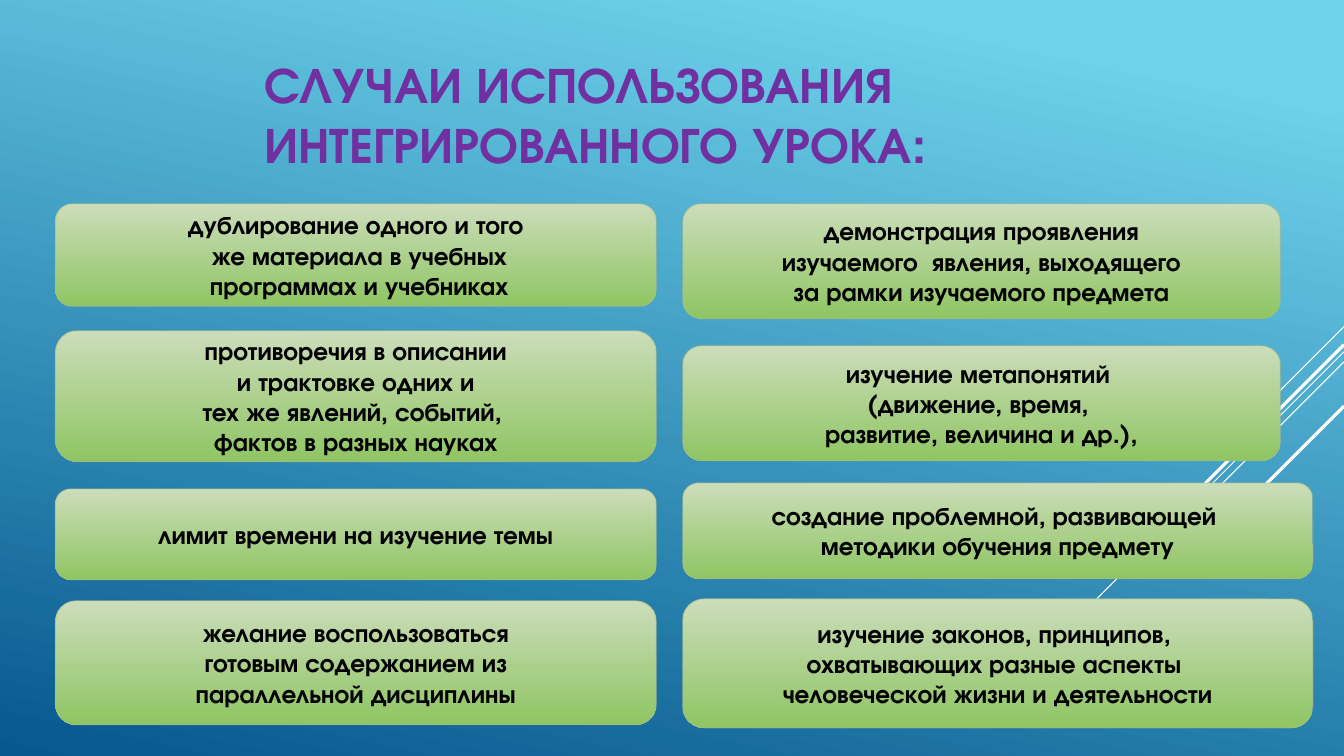
from lxml import etree
from pptx import Presentation
from pptx.dml.color import RGBColor
from pptx.enum.shapes import MSO_CONNECTOR, MSO_SHAPE
from pptx.enum.text import MSO_ANCHOR, MSO_AUTO_SIZE, PP_ALIGN
from pptx.oxml.ns import qn
from pptx.util import Inches, Pt

FONT = "TeX Gyre Adventor"
SKY = RGBColor(0x6E, 0xD2, 0xEB)
DEEP_BLUE = RGBColor(0x06, 0x58, 0x8E)
PALE_GREEN = RGBColor(0xCC, 0xDD, 0xBA)
GREEN = RGBColor(0x8F, 0xC5, 0x63)
EDGE = RGBColor(0xA4, 0xBB, 0x8B)
PURPLE = RGBColor(0x70, 0x30, 0xA0)
WHITE = RGBColor(0xFF, 0xFF, 0xFF)
BLACK = RGBColor(0, 0, 0)

SLIDE_W = 13.33
LEFT_X, RIGHT_X = 0.55, 6.77

# start height at the right edge, end x, line width
RAYS = [
    (3.24, 12.33, 0.75),
    (3.49, 10.07, 0.75),
    (3.59, 11.26, 0.75),
    (3.42, 11.42, 2.25),
    (4.03, 11.94, 2.25),
]

# left, top, width, height, lines
CASES = [
    (LEFT_X, 2.02, 5.96, 1.02, ["дублирование одного и того",
                                " же материала в учебных",
                                " программах и учебниках"]),
    (LEFT_X, 3.28, 5.96, 1.3, ["противоречия в описании",
                               " и трактовке одних и ",
                               "тех же явлений, событий, ",
                               "фактов в разных науках"]),
    (LEFT_X, 4.85, 5.96, 0.9, ["лимит времени на изучение темы"]),
    (LEFT_X, 5.96, 5.96, 1.23, ["желание воспользоваться",
                                " готовым содержанием из ",
                                "параллельной дисциплины"]),
    (RIGHT_X, 2.02, 5.93, 1.14, ["демонстрация проявления",
                                 " изучаемого  явления, выходящего ",
                                 "за рамки изучаемого предмета"]),
    (RIGHT_X, 3.43, 5.93, 1.14, ["изучение метапонятий ",
                                 "(движение, время, ",
                                 "развитие, величина и др.),"]),
    (RIGHT_X, 4.79, 6.25, 0.95, ["создание проблемной, развивающей ",
                                 "методики обучения предмету"]),
    (RIGHT_X, 5.94, 6.25, 1.28, ["изучение законов, принципов, ",
                                 "охватывающих разные аспекты ",
                                 "человеческой жизни и деятельности"]),
]


class SlideBuilder:
    def __init__(self, prs, font):
        self.s = prs.slides.add_slide(prs.slide_layouts[5])
        self.font = font

    def gradient(self, fill, angle, stops):
        """Fill with a linear gradient; angle is clockwise in degrees."""
        fill.gradient()
        fill.gradient_angle = 360 - angle
        for stop, (position, color) in zip(fill.gradient_stops, stops):
            stop.position = position
            stop.color.rgb = color

    def background(self):
        self.gradient(self.s.background.fill, 102, [(0.1, SKY), (1, DEEP_BLUE)])

    def run(self, p, text, size, color):
        r = p.add_run()
        r.text = text
        r.font.name = self.font
        r.font.size = Pt(size)
        r.font.bold = True
        r.font.color.rgb = color

    def title(self, text):
        sp = self.s.shapes.title
        sp.left, sp.top = Inches(2.52), Inches(0.5)
        sp.width, sp.height = Inches(10.5), Inches(1.25)
        tf = sp.text_frame
        tf.auto_size = MSO_AUTO_SIZE.NONE
        tf.word_wrap = True
        tf.vertical_anchor = MSO_ANCHOR.MIDDLE
        p = tf.paragraphs[0]
        p.alignment = PP_ALIGN.LEFT
        self.run(p, text, 36, PURPLE)

    def ray(self, top, end_x, width):
        """Draw a 45-degree line down and left from the slide's right edge."""
        line = self.s.shapes.add_connector(
            MSO_CONNECTOR.STRAIGHT, Inches(SLIDE_W), Inches(top),
            Inches(end_x), Inches(top + SLIDE_W - end_x))
        line.line.color.rgb = WHITE
        line.line.width = Pt(width)
        etree.SubElement(line._element.spPr, qn("a:effectLst"))

    def card(self, left, top, width, height, lines):
        sp = self.s.shapes.add_shape(
            MSO_SHAPE.ROUNDED_RECTANGLE, Inches(left), Inches(top),
            Inches(width), Inches(height))
        self.gradient(sp.fill, 90, [(0, PALE_GREEN), (1, GREEN)])
        sp.line.color.rgb = EDGE
        sp.line.width = Pt(0.75)
        edge = sp.line.fill._xPr.find(".//" + qn("a:srgbClr"))
        etree.SubElement(edge, qn("a:alpha"), val="60000")
        sp.shadow.inherit = False
        tf = sp.text_frame
        tf.word_wrap = False
        tf.vertical_anchor = MSO_ANCHOR.MIDDLE
        for i, text in enumerate(lines):
            p = tf.add_paragraph() if i else tf.paragraphs[0]
            p.alignment = PP_ALIGN.CENTER
            self.run(p, text, 18, BLACK)


def main():
    prs = Presentation()
    prs.slide_width, prs.slide_height = Inches(SLIDE_W), Inches(7.5)
    slide = SlideBuilder(prs, FONT)
    slide.background()
    for ray in RAYS:
        slide.ray(*ray)
    slide.title("СЛУЧАИ ИСПОЛЬЗОВАНИЯ ИНТЕГРИРОВАННОГО УРОКА:")
    for case in CASES:
        slide.card(*case)
    prs.save("out.pptx")


if __name__ == "__main__":
    main()
